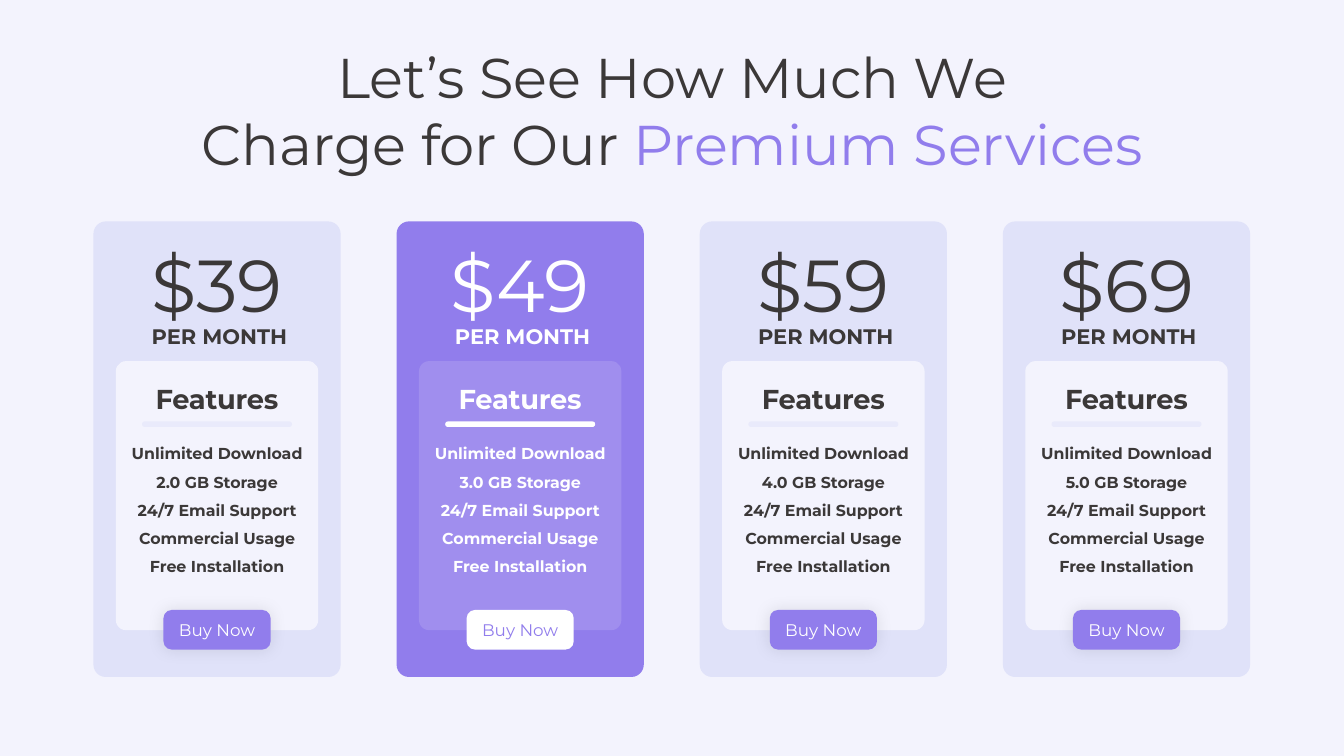
from dataclasses import dataclass

from lxml import etree
from pptx import Presentation
from pptx.dml.color import RGBColor
from pptx.enum.shapes import MSO_SHAPE
from pptx.enum.text import MSO_ANCHOR, MSO_AUTO_SIZE, PP_ALIGN
from pptx.oxml.ns import qn
from pptx.shapes.autoshape import Shape
from pptx.slide import Slide
from pptx.text.text import TextFrame
from pptx.util import Cm, Pt

ROUNDED = MSO_SHAPE.ROUNDED_RECTANGLE
CENTER = PP_ALIGN.CENTER
TOP, MIDDLE = MSO_ANCHOR.TOP, MSO_ANCHOR.MIDDLE
NO_AUTOFIT = MSO_AUTO_SIZE.NONE

FONT = "Montserrat"
DARK = RGBColor(0x3B, 0x38, 0x38)
WHITE = RGBColor(0xFF, 0xFF, 0xFF)
PURPLE = RGBColor(0x91, 0x7D, 0xEC)
LIGHT_PURPLE = RGBColor(0xA0, 0x8E, 0xEE)
LAVENDER = RGBColor(0xE0, 0xE2, 0xF9)
PALE_LAVENDER = RGBColor(0xE9, 0xEA, 0xFB)
BACKGROUND = RGBColor(0xF3, 0xF3, 0xFD)

# Lengths in centimetres
FIRST_CENTER, PLAN_PITCH = 5.47, 7.64
FEATURE_TOP, FEATURE_PITCH = 11.07, 0.71


@dataclass(frozen=True)
class Theme:
    card: RGBColor
    panel: RGBColor
    rule: RGBColor
    text: RGBColor
    button: RGBColor
    button_text: RGBColor
    button_shadow: bool


@dataclass(frozen=True)
class Plan:
    price: str
    storage: str
    theme: Theme


REGULAR = Theme(LAVENDER, BACKGROUND, PALE_LAVENDER, DARK, PURPLE, WHITE, True)
FEATURED = Theme(PURPLE, LIGHT_PURPLE, WHITE, WHITE, WHITE, PURPLE, False)

PLANS = [
    Plan("$39", "2.0 GB Storage", REGULAR),
    Plan("$49", "3.0 GB Storage", FEATURED),
    Plan("$59", "4.0 GB Storage", REGULAR),
    Plan("$69", "5.0 GB Storage", REGULAR),
]


def write(tf: TextFrame, text: str, size: float, color: RGBColor, bold: bool = False) -> None:
    """Fill a frame with one centred, unwrapped line."""
    tf.word_wrap = False
    p = tf.paragraphs[0]
    p.text = text
    p.alignment = CENTER
    p.font.name = FONT
    p.font.size = Pt(size)
    p.font.bold = bold
    p.font.color.rgb = color


def add_label(slide: Slide, center: float, top: float, width: float, height: float,
              text: str, size: float, color: RGBColor, bold: bool = False) -> TextFrame:
    sp = slide.shapes.add_textbox(Cm(center - width / 2), Cm(top), Cm(width), Cm(height))
    write(sp.text_frame, text, size, color, bold)
    return sp.text_frame


def add_rounded(slide: Slide, center: float, top: float, width: float, height: float,
                radius: float, color: RGBColor) -> Shape:
    sp = slide.shapes.add_shape(ROUNDED, Cm(center - width / 2), Cm(top), Cm(width), Cm(height))
    sp.adjustments[0] = radius
    sp.shadow.inherit = False
    sp.fill.solid()
    sp.fill.fore_color.rgb = color
    sp.line.fill.background()
    return sp


def add_glow_shadow(sp: Shape) -> None:
    """Put a faint, unshifted soft shadow around the shape."""
    effects = sp.element.spPr.find(qn("a:effectLst"))
    shadow = etree.SubElement(effects, qn("a:outerShdw"), blurRad=str(Pt(12)),
                              dist="0", dir="0", algn="ctr", rotWithShape="0")
    color = etree.SubElement(shadow, qn("a:srgbClr"), val="000000")
    etree.SubElement(color, qn("a:alpha"), val="10000")


def add_title(slide: Slide) -> None:
    title = slide.shapes.title
    title.left, title.top, title.width, title.height = Cm(3.58), Cm(0.94), Cm(26.72), Cm(3.68)
    tf = title.text_frame
    tf.word_wrap = True
    tf.auto_size = NO_AUTOFIT
    tf.vertical_anchor = TOP
    lines = [
        [("Let’s See How Much We", DARK)],
        [("Charge for Our ", DARK), ("Premium Services", PURPLE)],
    ]
    for i, line in enumerate(lines):
        p = tf.paragraphs[0] if i == 0 else tf.add_paragraph()
        p.alignment = CENTER
        p.font.name = FONT
        p.font.size = Pt(40)
        for text, color in line:
            r = p.add_run()
            r.text = text
            r.font.color.rgb = color


def add_plan(slide: Slide, plan: Plan, center: float) -> None:
    theme = plan.theme
    add_rounded(slide, center, 5.58, 6.23, 11.48, 0.05, theme.card)
    add_label(slide, center, 5.89, 4.1, 2.49, plan.price, 52.5, theme.text)
    add_label(slide, center + 0.06, 8.03, 4.1, 0.89, "PER MONTH", 15, theme.text, True)

    add_rounded(slide, center, 9.1, 5.1, 6.78, 0.05, theme.panel)
    add_rounded(slide, center, 10.62, 3.78, 0.14, 0.5, theme.rule)
    heading = add_label(slide, center, 9.5, 3.66, 1.09, "Features", 19.5, theme.text, True)
    heading.paragraphs[0].runs[0].font._element.set("spc", "-20")

    features = ["Unlimited Download", plan.storage, "24/7 Email Support",
                "Commercial Usage", "Free Installation"]
    for i, feature in enumerate(features):
        add_label(slide, center, FEATURE_TOP + i * FEATURE_PITCH, 4.83, 0.76,
                  feature, 11.25, theme.text, True)

    button = add_rounded(slide, center, 15.37, 2.7, 1, 0.21, theme.button)
    button.text_frame.vertical_anchor = MIDDLE
    write(button.text_frame, "Buy Now", 12, theme.button_text)
    if theme.button_shadow:
        add_glow_shadow(button)


def main() -> None:
    prs = Presentation()
    prs.slide_width, prs.slide_height = Cm(33.87), Cm(19.05)
    slide = prs.slides.add_slide(prs.slide_layouts[5])
    slide.background.fill.solid()
    slide.background.fill.fore_color.rgb = BACKGROUND
    add_title(slide)
    for i, plan in enumerate(PLANS):
        add_plan(slide, plan, FIRST_CENTER + i * PLAN_PITCH)
    prs.save("out.pptx")


if __name__ == "__main__":
    main()
